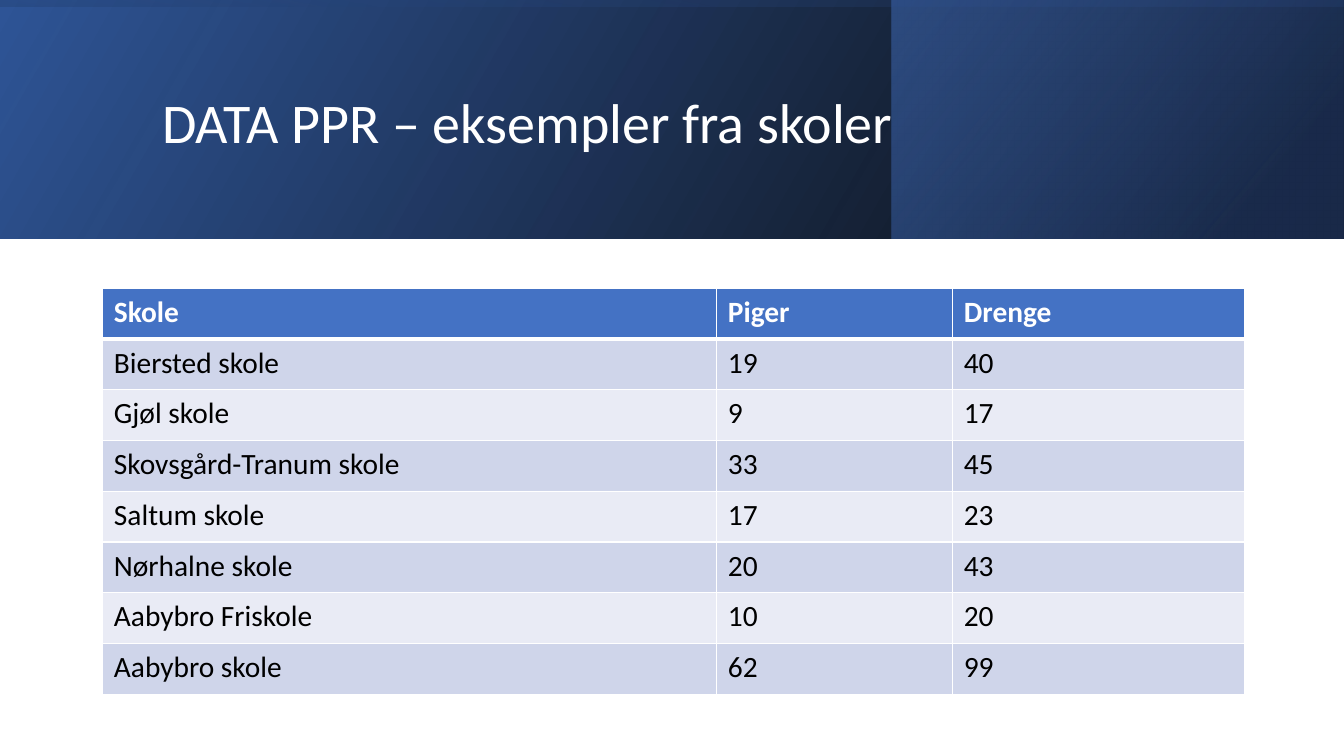
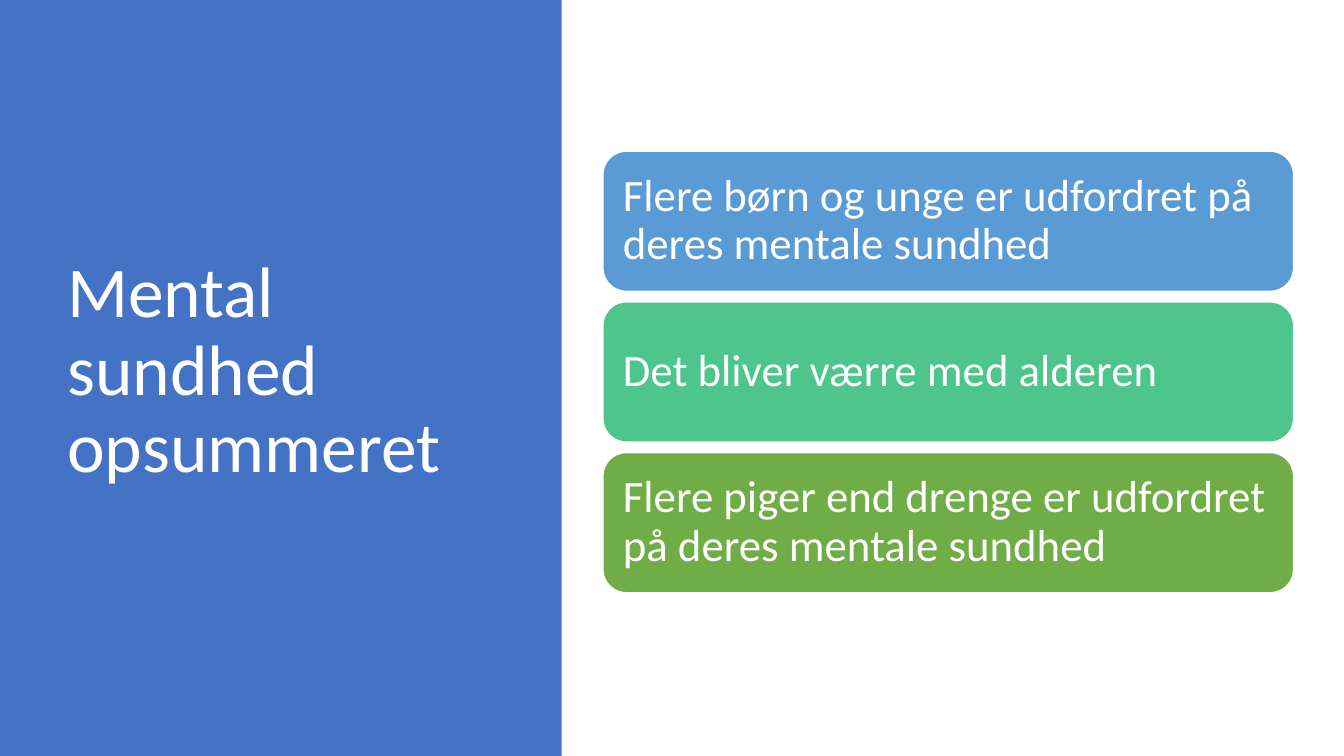
from lxml.etree import SubElement
from pptx import Presentation
from pptx.dml.color import RGBColor
from pptx.enum.shapes import MSO_SHAPE as Shape
from pptx.enum.text import MSO_ANCHOR as Anchor
from pptx.oxml import parse_xml
from pptx.oxml.ns import nsdecls, qn
from pptx.util import Inches, Pt

# Content
SCHOOL_TITLE = "DATA PPR – eksempler fra skoler"
SCHOOLS = [
    ("Skole", "Piger", "Drenge"),
    ("Biersted skole", 19, 40),
    ("Gjøl skole", 9, 17),
    ("Skovsgård-Tranum skole", 33, 45),
    ("Saltum skole", 17, 23),
    ("Nørhalne skole", 20, 43),
    ("Aabybro Friskole", 10, 20),
    ("Aabybro skole", 62, 99),
]
SUMMARY_TITLE = "Mental sundhed opsummeret"
SUMMARY = [
    ("Flere børn og unge er udfordret på deres mentale sundhed", "sky"),
    ("Det bliver værre med alderen", "mint"),
    ("Flere piger end drenge er udfordret på deres mentale sundhed", "green"),
]

# Shared style
FONT = "Calibri"
COLORS = {
    "white": "FFFFFF", "black": "000000", "blue": "4472C4",
    "deep": "2F5597", "navy": "203864", "sky": "5B9BD5",
    "mint": "4DC58D", "green": "70AD47",
    "row_odd": "CFD5EA", "row_even": "E9EBF5",
}
SLIDE_W, SLIDE_H, BAND_H = 13.33, 7.5, 2.37

# Band layers: place, rotation, gradient angle, stops (position, colour, opacity)
BAND_LAYERS = [
    ((0, 0, SLIDE_W, BAND_H), 0, 330,
     [(0, "black", 96), (100, "deep", 100)]),
    ((8.84, 0, 4.48, BAND_H), 0, 320,
     [(19, "navy", 68), (100, "blue", 48)]),
    (((SLIDE_W - BAND_H) / 2, (BAND_H - SLIDE_W) / 2, BAND_H, SLIDE_W), 270, 350,
     [(23, "deep", 16), (99, "black", 45)]),
]
COLUMN_WIDTHS = [6.09, 2.34, 2.89]
TABLE_LEFT, TABLE_TOP, TABLE_H = 1.02, 2.86, 4.03
CARD_LEFT, CARD_TOP, CARD_W, CARD_H, CARD_STEP = 5.98, 1.5, 6.85, 1.39, 1.495


def rgb(name):
    return RGBColor.from_string(COLORS[name])


def write(frame, text, size, color="white", bold=False, spacing=None,
          margins=(0.1, 0.05)):
    side, edge = (Inches(margin) for margin in margins)
    frame.margin_left = frame.margin_right = side
    frame.margin_top = frame.margin_bottom = edge
    frame.word_wrap = True
    paragraph = frame.paragraphs[0]
    paragraph.line_spacing = spacing
    run = paragraph.add_run()
    run.text = str(text)
    font = run.font
    font.name, font.size, font.bold = FONT, Pt(size), bold
    font.color.rgb = rgb(color)


def add_title(slide, text, place, size):
    frame = slide.shapes.add_textbox(*map(Inches, place)).text_frame
    frame.vertical_anchor = Anchor.MIDDLE
    write(frame, text, size, spacing=0.9)


def add_panel(slide, place, fill=None, preset=Shape.RECTANGLE):
    panel = slide.shapes.add_shape(preset, *map(Inches, place))
    panel.shadow.inherit = False
    panel.line.fill.background()
    if fill:
        panel.fill.solid()
        panel.fill.fore_color.rgb = rgb(fill)
    return panel


def add_band_layer(slide, place, rotation, angle, stops):
    layer = add_panel(slide, place)
    layer.rotation = rotation
    properties = layer.element.spPr
    properties.find(qn("a:xfrm")).set("flipH", "1")
    stop_xml = "".join(
        f'<a:gs pos="{position * 1000}"><a:srgbClr val="{COLORS[color]}">'
        f'<a:alpha val="{opacity * 1000}"/></a:srgbClr></a:gs>'
        for position, color, opacity in stops)
    gradient = parse_xml(
        f'<a:gradFill {nsdecls("a")} rotWithShape="1"><a:gsLst>{stop_xml}</a:gsLst>'
        f'<a:lin ang="{angle * 60000}" scaled="0"/></a:gradFill>')
    properties.find(qn("a:prstGeom")).addnext(gradient)


def add_borders(cell, bottom):
    properties = cell._tc.get_or_add_tcPr()
    for side, width in (("L", 1), ("R", 1), ("T", 1), ("B", bottom)):
        line = SubElement(properties, qn(f"a:ln{side}"), w=str(Pt(width)))
        fill = SubElement(line, qn("a:solidFill"))
        SubElement(fill, qn("a:srgbClr"), val=COLORS["white"])


def add_school_table(slide):
    table = slide.shapes.add_table(
        len(SCHOOLS), len(COLUMN_WIDTHS), Inches(TABLE_LEFT), Inches(TABLE_TOP),
        Inches(sum(COLUMN_WIDTHS)), Inches(TABLE_H)).table
    for column, width in zip(table.columns, COLUMN_WIDTHS):
        column.width = Inches(width)
    for r, school in enumerate(SCHOOLS):
        header = r == 0
        fill = "blue" if header else "row_odd" if r % 2 else "row_even"
        for c, value in enumerate(school):
            cell = table.cell(r, c)
            add_borders(cell, bottom=3 if header else 1)
            cell.fill.solid()
            cell.fill.fore_color.rgb = rgb(fill)
            write(cell.text_frame, value, 21, bold=header,
                  color="white" if header else "black")
            cell.margin_left = cell.margin_right = Inches(0.11)
            cell.margin_top = cell.margin_bottom = Inches(0.06)


def build_schools(slide):
    for layer in BAND_LAYERS:
        add_band_layer(slide, *layer)
    add_title(slide, SCHOOL_TITLE, (1.51, 0.38, 10.63, 1.72), 40)
    add_school_table(slide)


def build_summary(slide):
    add_panel(slide, (0, 0, 5.57, SLIDE_H), "blue")
    add_title(slide, SUMMARY_TITLE, (0.57, 0.68, 4.16, 6.02), 51)
    for i, (message, color) in enumerate(SUMMARY):
        place = (CARD_LEFT, CARD_TOP + i * CARD_STEP, CARD_W, CARD_H)
        card = add_panel(slide, place, color, Shape.ROUNDED_RECTANGLE)
        card.line.color.rgb = rgb("white")
        card.line.width = Pt(1)
        card.text_frame.vertical_anchor = Anchor.MIDDLE
        write(card.text_frame, message, 32, spacing=0.9, margins=(0.13, 0.13))
        # The text starts at the left, inside the rounded corners
        card.text_frame.paragraphs[0].alignment = 1


def main():
    deck = Presentation()
    deck.slide_width, deck.slide_height = Inches(SLIDE_W), Inches(SLIDE_H)
    for build in (build_schools, build_summary):
        build(deck.slides.add_slide(deck.slide_layouts[6]))
    deck.save("out.pptx")


if __name__ == "__main__":
    main()
